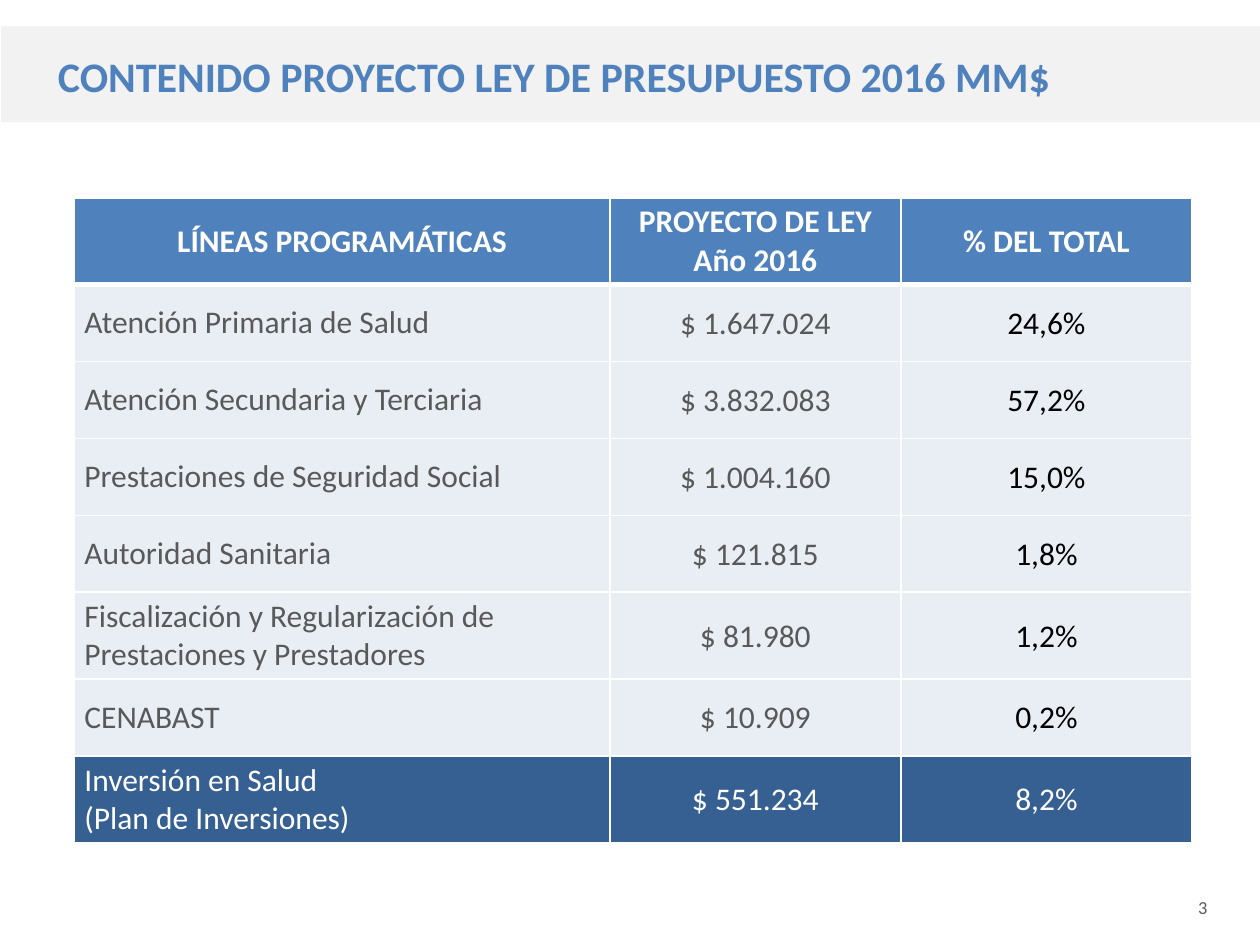
import pptx
import pptx.util
import pptx.dml.color
import pptx.enum.shapes
import pptx.enum.text
import pptx.oxml.ns
import lxml.etree

Inches = pptx.util.Inches
Pt = pptx.util.Pt
RGBColor = pptx.dml.color.RGBColor
PP_ALIGN = pptx.enum.text.PP_ALIGN
MSO_ANCHOR = pptx.enum.text.MSO_ANCHOR
qn = pptx.oxml.ns.qn

WHITE = RGBColor(0xFF, 0xFF, 0xFF)
BLACK = RGBColor(0x00, 0x00, 0x00)
GRAY = RGBColor(0x59, 0x59, 0x59)
BAND = RGBColor(0xF2, 0xF2, 0xF2)
BLUE = RGBColor(0x4F, 0x81, 0xBD)
DARK_BLUE = RGBColor(0x37, 0x60, 0x92)
PALE_BLUE = RGBColor(0xE9, 0xED, 0xF4)

ROWS = [
    ("LÍNEAS PROGRAMÁTICAS", "PROYECTO DE LEY\nAño 2016", "% DEL TOTAL"),
    ("Atención Primaria de Salud", "$ 1.647.024", "24,6%"),
    ("Atención Secundaria y Terciaria", "$ 3.832.083", "57,2%"),
    ("Prestaciones de Seguridad Social", "$ 1.004.160", "15,0%"),
    ("Autoridad Sanitaria", "$ 121.815", "1,8%"),
    ("Fiscalización y Regularización de Prestaciones y Prestadores", "$ 81.980", "1,2%"),
    ("CENABAST", "$ 10.909", "0,2%"),
    ("Inversión en Salud\n(Plan de Inversiones)", "$ 551.234", "8,2%"),
]


def format_text(tf, size, color, bold=False, align=PP_ALIGN.LEFT):
    for p in tf.paragraphs:
        p.alignment = align
        for r in p.runs:
            r.font.name = "Calibri"
            r.font.size = Pt(size)
            r.font.bold = bold
            r.font.color.rgb = color


def set_border(cell, side, width):
    tcPr = cell._tc.get_or_add_tcPr()
    ln = lxml.etree.SubElement(tcPr, qn("a:ln" + side), w=str(Pt(width)))
    fill = lxml.etree.SubElement(ln, qn("a:solidFill"))
    lxml.etree.SubElement(fill, qn("a:srgbClr"), val=str(WHITE))


prs = pptx.Presentation()
prs.slide_width = Inches(10)
prs.slide_height = Inches(7.5)
s = prs.slides.add_slide(prs.slide_layouts[5])

title = s.shapes.title
title.left, title.top = Inches(0.36), Inches(0.35)
title.width, title.height = Inches(9.76), Inches(0.43)
tf = title.text_frame
tf.text = "CONTENIDO PROYECTO LEY DE PRESUPUESTO 2016 MM$"
tf.vertical_anchor = MSO_ANCHOR.TOP
tf.auto_size = pptx.enum.text.MSO_AUTO_SIZE.NONE
format_text(tf, 24, BLUE, bold=True)

band = s.shapes.add_shape(pptx.enum.shapes.MSO_SHAPE.RECTANGLE,
                          Inches(0.01), Inches(0.21), Inches(10), Inches(0.76))
band.shadow.inherit = False
band.fill.solid()
band.fill.fore_color.rgb = BAND
band.line.fill.background()
title.element.addprevious(band.element)

table = s.shapes.add_table(len(ROWS), 3, Inches(0.59), Inches(1.57),
                           Inches(8.87), Inches(4.95)).table
for column, width in zip(table.columns, (4.25, 2.31, 2.31)):
    column.width = Inches(width)

last = len(ROWS) - 1
for i, row in enumerate(ROWS):
    header = i == 0
    table.rows[i].height = Inches(0.68 if header else 0.61)
    fill = BLUE if header else DARK_BLUE if i == last else PALE_BLUE
    for j, text in enumerate(row):
        cell = table.cell(i, j)
        cell.text_frame.text = text
        cell.vertical_anchor = MSO_ANCHOR.MIDDLE
        if header or j == 0:
            insets = (0.08, 0.04, 0.08, 0.04)
        else:
            insets = (0.01, 0.01, 0.01, 0)
        (cell.margin_left, cell.margin_top,
         cell.margin_right, cell.margin_bottom) = map(Inches, insets)
        if header or i == last:
            color = WHITE
        else:
            color = BLACK if j == 2 else GRAY
        align = PP_ALIGN.CENTER if header or j else PP_ALIGN.LEFT
        format_text(cell.text_frame, 18, color, header, align)
        for side, width in (("L", 1), ("R", 1), ("T", 3 if i == 1 else 1),
                            ("B", 3 if header else 1)):
            set_border(cell, side, width)
        cell.fill.solid()
        cell.fill.fore_color.rgb = fill

number = s.shapes.add_textbox(Inches(9.41), Inches(7.06), Inches(0.48), Inches(0.29))
tf = number.text_frame
tf.word_wrap = True
tf.text = "3"
format_text(tf, 10.5, GRAY)

prs.save("out.pptx")
